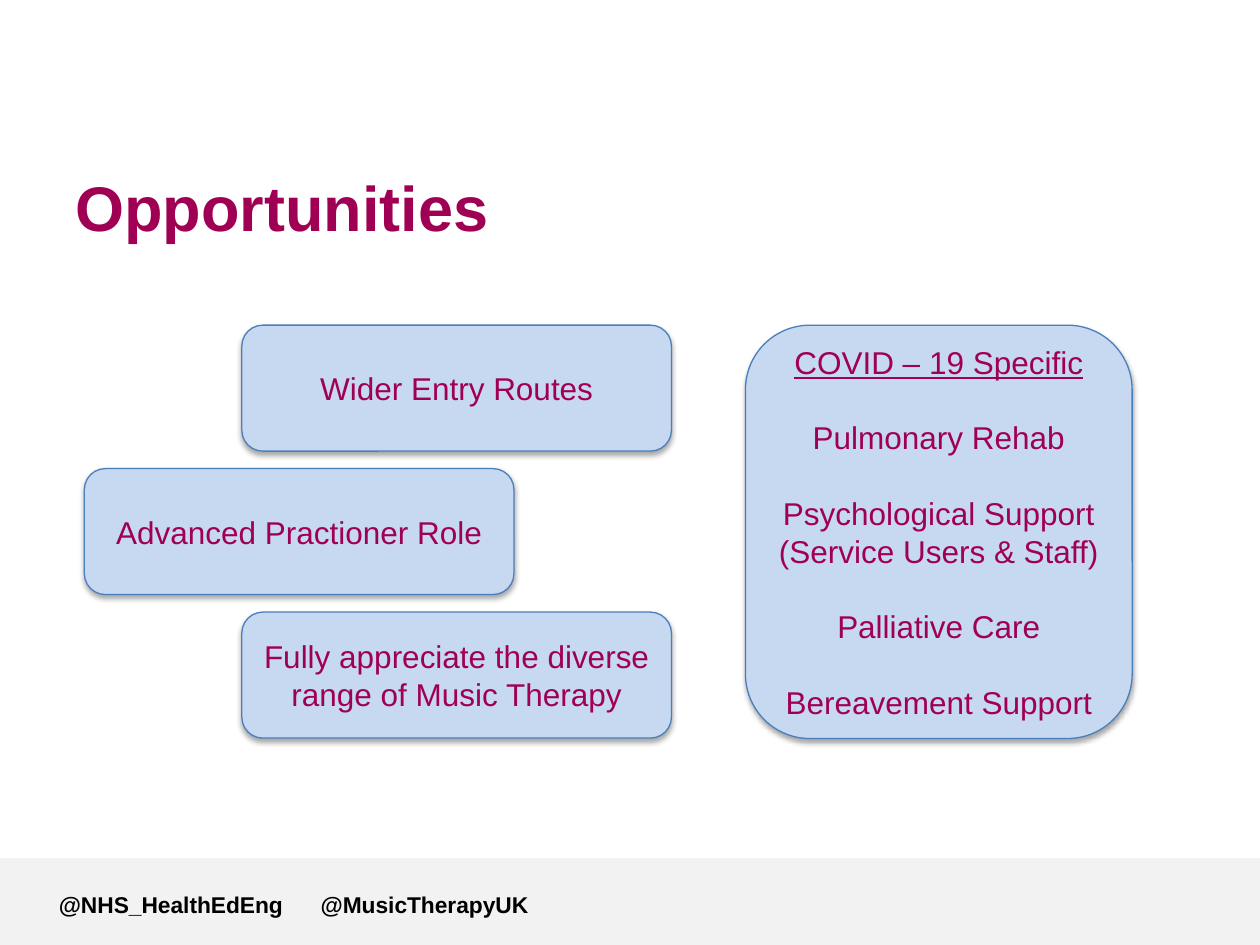
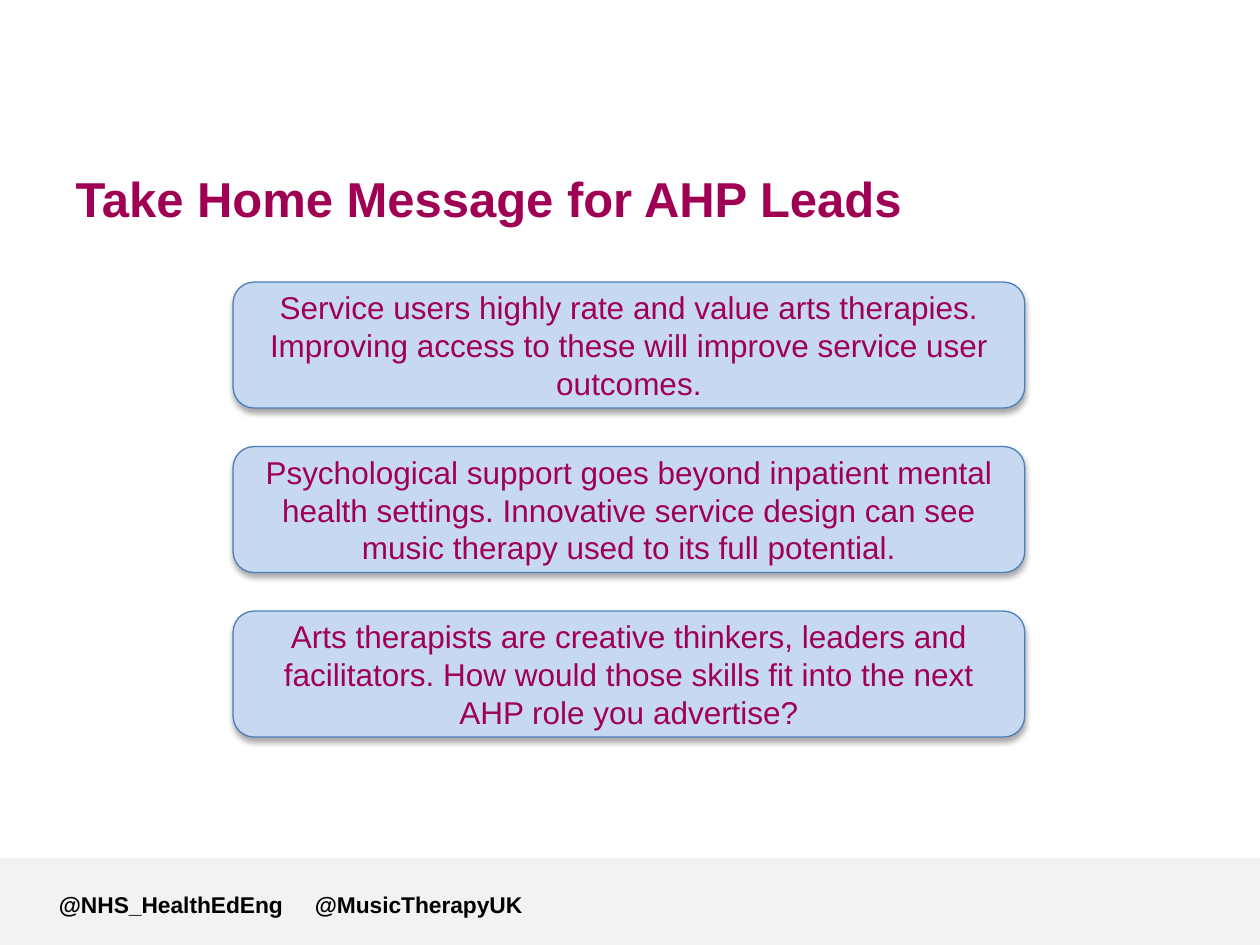
import pptx
import pptx.util
import pptx.oxml
import pptx.oxml.ns
import pptx.dml.color
import pptx.enum.shapes
import pptx.enum.text
from dataclasses import dataclass

Pt = pptx.util.Pt
RGB = pptx.dml.color.RGBColor.from_string
SHAPE = pptx.enum.shapes.MSO_SHAPE
ANCHOR = pptx.enum.text.MSO_ANCHOR
ALIGN = pptx.enum.text.PP_ALIGN

HANDLES = ["@NHS_HealthEdEng", "@MusicTherapyUK"]

OPTIONS = {
    "title": "Opportunities",
    "size": 36,
    "tab": 149.6,
    "cards": ["Wider Entry Routes",
              "Advanced Practioner Role",
              "Fully appreciate the diverse range of Music Therapy"],
    "lefts": [138.2, 48.2, 138.2],
    "top": 185.8,
    "width": 245.5,
    "step": 82,
}
COVID = [
    ["COVID – 19 Specific"],
    ["Pulmonary Rehab"],
    ["Psychological Support", "(Service Users & Staff)"],
    ["Palliative Care"],
    ["Bereavement Support"],
]
MESSAGE = {
    "title": "Take Home Message for AHP Leads",
    "size": 28,
    "tab": 146.2,
    "cards": ["Service users highly rate and value arts therapies. "
              "Improving access to these will improve service user outcomes.",
              "Psychological support goes beyond inpatient mental health "
              "settings. Innovative service design can see music therapy "
              "used to its full potential.",
              "Arts therapists are creative thinkers, leaders and "
              "facilitators. How would those skills fit into the next AHP "
              "role you advertise?"],
    "lefts": [133.2] * 3,
    "top": 161.2,
    "width": 452.4,
    "step": 94,
}


@dataclass(frozen=True)
class Theme:
    font: str = "Arial"
    plum: str = "A00054"
    sky: str = "C6D9F1"
    edge: str = "4B7EBC"
    band: str = "F2F2F2"
    ink: str = "000000"
    body: float = 18
    foot: float = 13
    card: float = 72
    gap: float = 21.6


THEME = Theme()
SHADOW = """<a:effectLst %s>
  <a:outerShdw blurRad="40000" dist="23000" dir="5400000" rotWithShape="0">
    <a:srgbClr val="000000"><a:alpha val="35000"/></a:srgbClr>
  </a:outerShdw>
</a:effectLst>""" % pptx.oxml.ns.nsdecls("a")


def box(left, top, width, height):
    return [Pt(n) for n in (left, top, width, height)]


def style(par, size, color, bold=False):
    for run in par.runs:
        font = run.font
        font.name = THEME.font
        font.size = Pt(size)
        font.bold = bold
        font.color.rgb = RGB(color)


def add_card(slide, place, groups):
    """Draw a shaded card; a gap parts each group of lines from the last."""
    card = slide.shapes.add_shape(SHAPE.ROUNDED_RECTANGLE, *box(*place))
    card.fill.solid()
    card.fill.fore_color.rgb = RGB(THEME.sky)
    card.line.color.rgb = RGB(THEME.edge)
    card.line.width = Pt(0.75)
    card._element.spPr.append(pptx.oxml.parse_xml(SHADOW))
    frame = card.text_frame
    frame.word_wrap = True
    frame.vertical_anchor = ANCHOR.MIDDLE
    frame.text = "\n".join(line for group in groups for line in group)
    heads = [n == 0 for group in groups for n in range(len(group))]
    for n, (par, head) in enumerate(zip(frame.paragraphs, heads)):
        par.alignment = ALIGN.CENTER
        par.space_before = Pt(THEME.gap if head and n else 0)
        style(par, THEME.body, THEME.plum)
    return card


def add_foot(slide, tab):
    band = slide.shapes.add_shape(SHAPE.RECTANGLE, *box(0, 490.3, 720, 49.7))
    band.shadow.inherit = False
    band.fill.solid()
    band.fill.fore_color.rgb = RGB(THEME.band)
    band.line.fill.background()
    text = slide.shapes.add_textbox(*box(26.6, 505.4, 420.5, 28.8))
    text.text_frame.word_wrap = True
    par = text.text_frame.paragraphs[0]
    par.text = "\t".join(HANDLES)
    par._p.get_or_add_pPr().append(pptx.oxml.parse_xml(
        '<a:tabLst %s><a:tab pos="%d" algn="l"/></a:tabLst>'
        % (pptx.oxml.ns.nsdecls("a"), Pt(tab))))
    style(par, THEME.foot, THEME.ink, True)


def add_page(deck, page):
    slide = deck.slides.add_slide(deck.slide_layouts[5])
    add_foot(slide, page["tab"])
    title = slide.shapes.title
    title.left, title.top, title.width, title.height = box(36, 92.9, 612, 53.3)
    frame = title.text_frame
    frame.text = page["title"]
    frame.auto_size = pptx.enum.text.MSO_AUTO_SIZE.NONE
    frame.vertical_anchor = ANCHOR.TOP
    par = frame.paragraphs[0]
    par.alignment = ALIGN.LEFT
    style(par, page["size"], THEME.plum, True)
    for row, (text, left) in enumerate(zip(page["cards"], page["lefts"])):
        top = page["top"] + row * page["step"]
        add_card(slide, (left, top, page["width"], THEME.card), [[text]])
    return slide


def main():
    deck = pptx.Presentation()
    deck.slide_width, deck.slide_height = Pt(720), Pt(540)
    slide = add_page(deck, OPTIONS)
    covid = add_card(slide, (426, 185.8, 221, 236.2), COVID)
    covid.text_frame.paragraphs[0].runs[0].font.underline = True
    add_page(deck, MESSAGE)
    deck.save("out.pptx")


if __name__ == "__main__":
    main()
